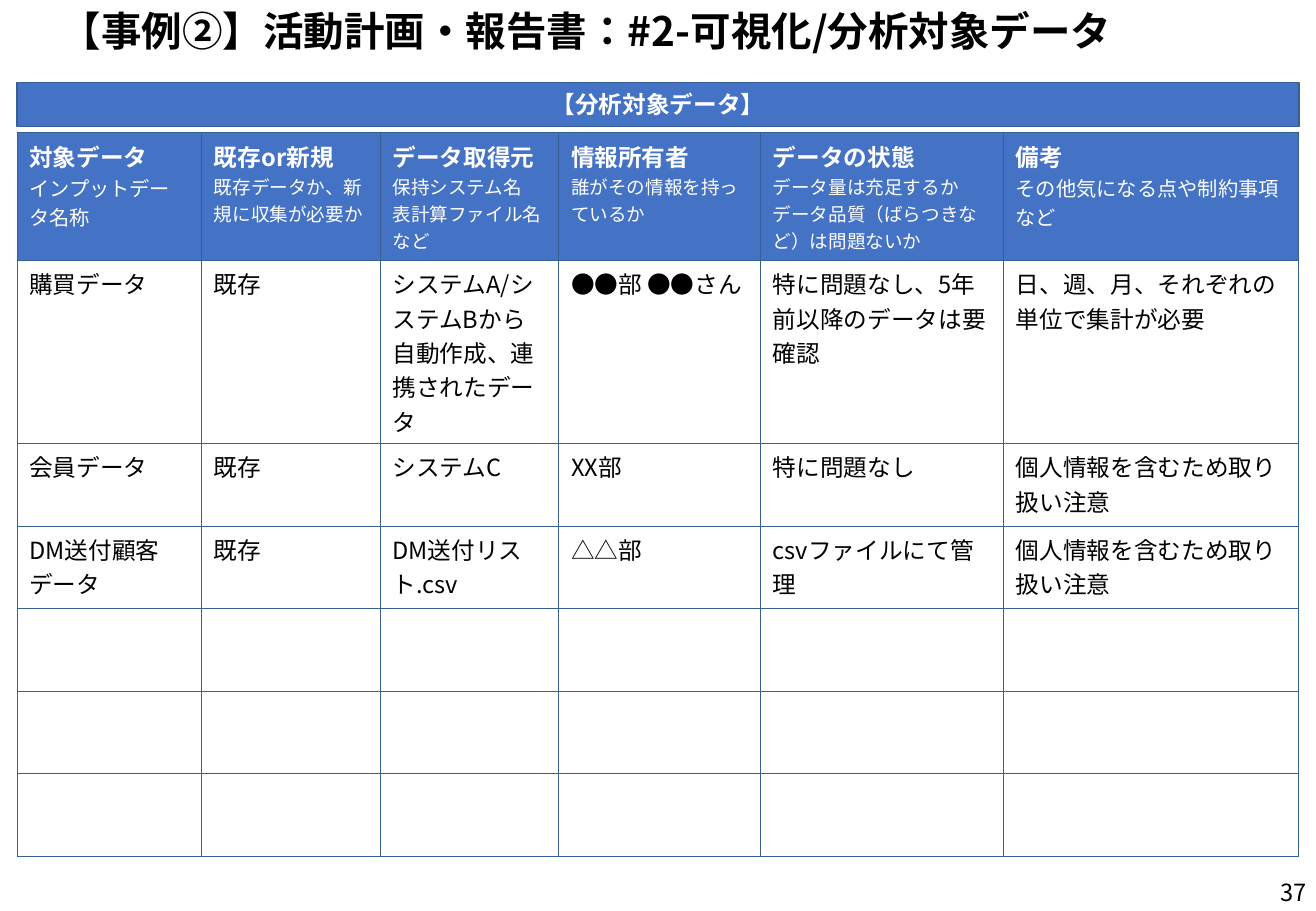
from lxml import etree
from pptx import Presentation
from pptx import util as u
from pptx.dml.color import RGBColor
from pptx.enum import lang, shapes, text
from pptx.oxml.ns import qn

TITLE = "【事例②】活動計画・報告書：#2-可視化/分析対象データ"
BANNER = "【分析対象データ】"
PAGE_NUMBER = "37"
# heading, explanation, explanation size, column width
COLUMNS = [
    ("対象データ", "インプットデータ名称", 12, 1.52),
    ("既存or新規", "既存データか、新規に収集が必要か", 11, 1.47),
    ("データ取得元", "保持システム名\n表計算ファイル名など", 11, 1.47),
    ("情報所有者", "誰がその情報を持っているか", 11, 1.66),
    ("データの状態", "データ量は充足するか\nデータ品質（ばらつきなど）は問題ないか", 11, 2),
    ("備考", "その他気になる点や制約事項など", 12, 2.43),
]
RECORDS = [
    ("購買データ", "既存", "システムA/システムBから自動作成、連携されたデータ", "●●部 ●●さん",
     "特に問題なし、5年前以降のデータは要確認", "日、週、月、それぞれの単位で集計が必要"),
    ("会員データ", "既存", "システムC", "XX部", "特に問題なし", "個人情報を含むため取り扱い注意"),
    ("DM送付顧客データ", "既存", "DM送付リスト.csv", "△△部",
     "csvファイルにて管理", "個人情報を含むため取り扱い注意"),
]
EMPTY_ROWS = 3

FONT = "Noto Sans CJK JP"
COLORS = {"black": "000000", "white": "FFFFFF", "blue": "4472C4", "border": "376092"}
WIDTH, HEIGHT = 10.83, 7.5
MARGIN = 0.14
HEADER_HEIGHT, FIRST_HEIGHT, ROW_HEIGHT = 1.05, 1.51, 0.68


def color(name):
    return RGBColor.from_string(COLORS[name])


def add_text(paragraph, content, size=14, bold=False, ink="black", align=None):
    """Append content to the paragraph, with a line break for each newline."""
    if align is not None:
        paragraph.alignment = align
    for index, line in enumerate(content.split("\n")):
        if index:
            paragraph.add_line_break()
        if not line:
            continue
        run = paragraph.add_run()
        run.text = line
        run.font.size, run.font.bold, run.font.name = u.Pt(size), bold, FONT
        run.font.color.rgb = color(ink)
        run.font.language_id = lang.MSO_LANGUAGE_ID.JAPANESE
        east_asian = etree.SubElement(run.font._element, qn("a:ea"))
        east_asian.set("typeface", FONT)


def add_text_box(slide, left, top, width, height, content, **style):
    shape = slide.shapes.add_textbox(*map(u.Inches, (left, top, width, height)))
    shape.text_frame.word_wrap = True
    shape.text_frame.vertical_anchor = text.MSO_ANCHOR.MIDDLE
    add_text(shape.text_frame.paragraphs[0], content, **style)
    return shape


def style_cell(cell, fill=None):
    properties = cell._tc.get_or_add_tcPr()
    for side in ("lnL", "lnR", "lnT", "lnB"):
        line = etree.SubElement(properties, qn(f"a:{side}"), w=str(u.Pt(0.5)))
        solid = etree.SubElement(line, qn("a:solidFill"))
        etree.SubElement(solid, qn("a:srgbClr"), val=COLORS["border"])
    if fill:
        cell.fill.solid()
        cell.fill.fore_color.rgb = color(fill)
    else:
        cell.fill.background()


def add_banner(slide):
    shape = slide.shapes.add_shape(
        shapes.MSO_SHAPE.RECTANGLE, u.Inches(MARGIN), u.Inches(0.68),
        u.Inches(WIDTH - 2 * MARGIN), u.Inches(0.36))
    shape.shadow.inherit = False
    shape.fill.solid()
    shape.fill.fore_color.rgb = color("blue")
    shape.line.color.rgb = color("border")
    shape.line.width = u.Pt(0.75)
    shape.text_frame.vertical_anchor = text.MSO_ANCHOR.MIDDLE
    add_text(shape.text_frame.paragraphs[0], BANNER, bold=True, ink="white",
             align=text.PP_ALIGN.CENTER)


def add_data_table(slide):
    heights = [HEADER_HEIGHT, FIRST_HEIGHT]
    heights += [ROW_HEIGHT] * (len(RECORDS) - 1 + EMPTY_ROWS)
    widths = [column[3] for column in COLUMNS]
    table = slide.shapes.add_table(
        len(heights), len(widths), u.Inches(MARGIN), u.Inches(1.09),
        u.Inches(sum(widths)), u.Inches(sum(heights))).table
    table.first_row = table.horz_banding = False
    for row, height in zip(table.rows, heights):
        row.height = u.Inches(height)
    for column, width in zip(table.columns, widths):
        column.width = u.Inches(width)
    for index, row in enumerate(table.rows):
        for cell in row.cells:
            style_cell(cell, fill=None if index else "blue")

    for cell, (heading, explanation, size, _) in zip(table.rows[0].cells, COLUMNS):
        paragraph = cell.text_frame.paragraphs[0]
        add_text(paragraph, heading + "\n", bold=True, ink="white")
        add_text(paragraph, explanation, size=size, ink="white")
    for index, record in enumerate(RECORDS, start=1):
        for cell, content in zip(table.rows[index].cells, record):
            add_text(cell.text_frame.paragraphs[0], content)


def main():
    presentation = Presentation()
    presentation.slide_width, presentation.slide_height = u.Inches(WIDTH), u.Inches(HEIGHT)
    slide = presentation.slides.add_slide(presentation.slide_layouts[6])
    add_text_box(slide, 8.32, 7.14, 2.53, 0.4, PAGE_NUMBER, align=text.PP_ALIGN.RIGHT)
    title = add_text_box(slide, 0.07, 0, 10.7, 0.5, TITLE, size=24, bold=True)
    title.text_frame.margin_left = u.Inches(0.43)
    add_banner(slide)
    add_data_table(slide)
    presentation.save("out.pptx")


if __name__ == "__main__":
    main()
